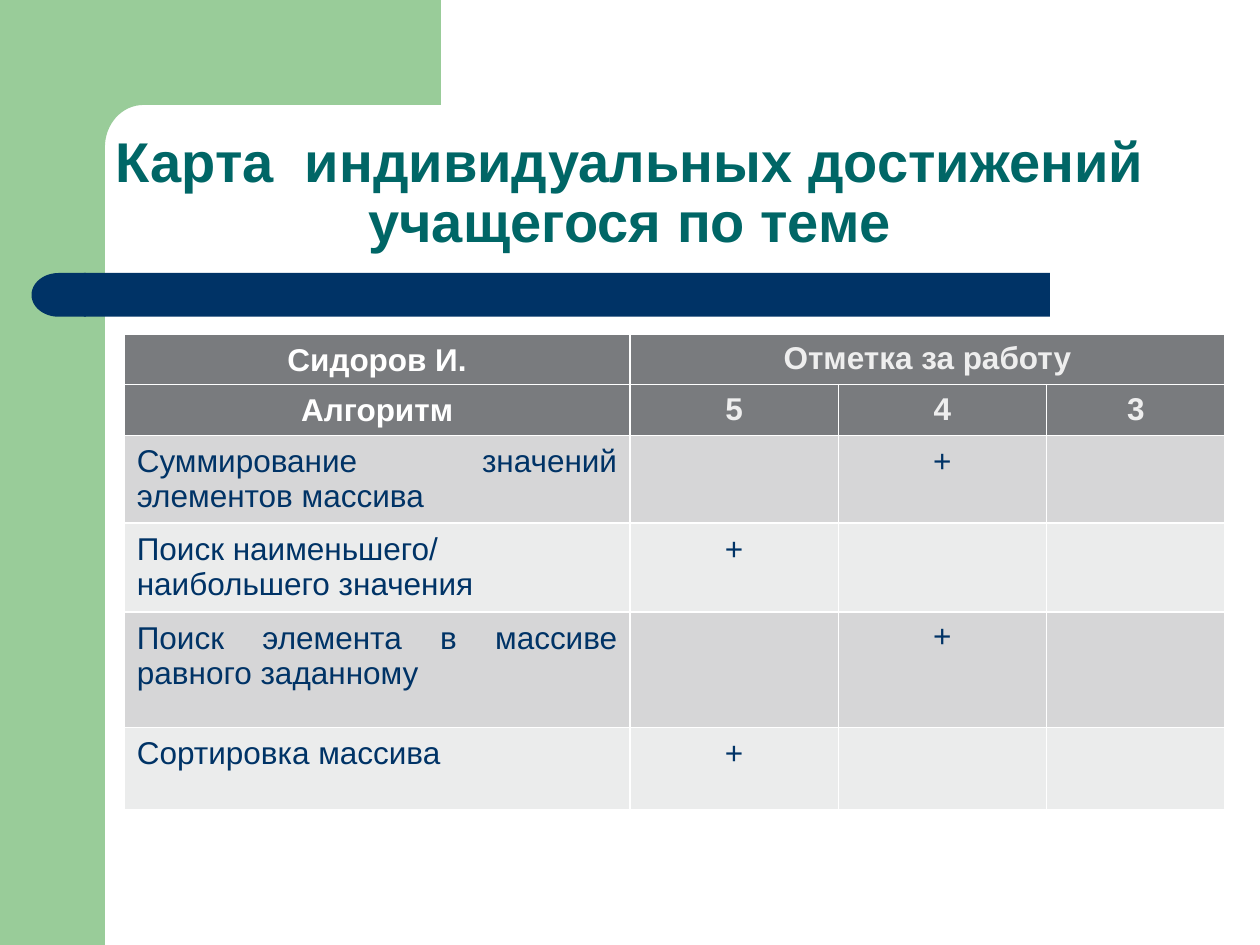
from dataclasses import dataclass
from math import cos, pi, sin

from lxml import etree
from pptx import Presentation
from pptx.dml.color import RGBColor
from pptx.enum.shapes import MSO_SHAPE
from pptx.enum.text import MSO_ANCHOR, PP_ALIGN
from pptx.oxml.ns import qn
from pptx.util import Pt

CENTER, JUSTIFY = PP_ALIGN.CENTER, PP_ALIGN.JUSTIFY
MIDDLE, TOP = MSO_ANCHOR.MIDDLE, MSO_ANCHOR.TOP
RECTANGLE, DELAY = MSO_SHAPE.RECTANGLE, MSO_SHAPE.FLOWCHART_DELAY
TITLE_ONLY = 5


@dataclass(frozen=True)
class Theme:
    """Colours, font and type sizes of the slide."""
    font: str = "Arial"
    title_size: int = 32
    table_size: int = 18
    green: str = "99CC99"
    navy: str = "003366"
    teal: str = "006666"
    white: str = "FFFFFF"
    pale: str = "EEEEEE"
    header: str = "797B7E"
    bands: tuple = ("D6D6D7", "EBECEC")


THEME = Theme()
COLUMN_WIDTHS = (289, 119, 119, 102)
ROW_HEIGHTS = (28, 29, 50, 51, 66, 47)
HEADER_ROWS = (("Сидоров И.", "Отметка за работу", "", ""),
               ("Алгоритм", "5", "4", "3"))
RESULTS = (("Суммирование значений элементов массива", "4"),
           ("Поиск наименьшего/\nнаибольшего значения", "5"),
           ("Поиск элемента в массиве равного заданному", "4"),
           ("Сортировка массива", "5"))


def apply(target, values):
    """Set each attribute of the target from a dict."""
    for name, value in values.items():
        setattr(target, name, value)


def place(shape, left, top, width, height):
    """Position a shape in points."""
    apply(shape, {"left": Pt(left), "top": Pt(top),
                  "width": Pt(width), "height": Pt(height)})


def write(text_frame, text, alignment, size, color, bold, spacing=1.0):
    """Write formatted paragraphs, one for each line of text."""
    text_frame.text = text
    for paragraph in text_frame.paragraphs:
        apply(paragraph, {"alignment": alignment, "line_spacing": spacing,
                          "space_before": Pt(0), "space_after": Pt(0)})
        apply(paragraph.font, {"name": THEME.font, "size": Pt(size), "bold": bold})
        paragraph.font.color.rgb = RGBColor.from_string(color)


def paint(shape, color):
    """Give a shape a plain fill with no line or shadow."""
    shape.shadow.inherit = False
    shape.fill.solid()
    shape.fill.fore_color.rgb = RGBColor.from_string(color)
    shape.line.fill.background()


def add_block(slide, kind, box, color, rotation=0):
    """Add a plain preset shape."""
    shape = slide.shapes.add_shape(kind, *map(Pt, box))
    shape.rotation = rotation
    paint(shape, color)


def add_corner(slide):
    """Add the green top band with its rounded inner corner."""
    left, inner, right, edge, bottom = 36, 60, 252, 60, 92
    radius_x, radius_y, steps = 22, 24, 16
    angles = [pi / 2 * step / steps for step in range(steps + 1)]
    arc = [(inner + radius_x * (1 - sin(angle)), edge + radius_y * (1 - cos(angle)))
           for angle in angles]
    points = [(right, edge), *arc, (inner, bottom), (left, bottom), (left, 0)]
    builder = slide.shapes.build_freeform(Pt(right), 0)
    builder.add_line_segments([(Pt(x), Pt(y)) for x, y in points])
    paint(builder.convert_to_shape(), THEME.green)


def add_title(slide):
    """Place and format the title placeholder."""
    title = slide.shapes.title
    place(title, 54, 77, 612, 68)
    apply(title.text_frame, {"word_wrap": True, "vertical_anchor": MIDDLE})
    write(title.text_frame, "Карта  индивидуальных достижений учащегося по теме",
          CENTER, THEME.title_size, THEME.teal, True, 0.9)


def add_borders(cell):
    """Draw thin white lines on all sides of a cell."""
    properties = cell._tc.get_or_add_tcPr()
    for index, side in enumerate(("lnL", "lnR", "lnT", "lnB")):
        line = etree.Element(qn(f"a:{side}"), w=str(Pt(0.96)))
        fill = etree.SubElement(line, qn("a:solidFill"))
        etree.SubElement(fill, qn("a:srgbClr"), val=THEME.white)
        properties.insert(index, line)


def format_cell(cell, text, fill, alignment, color, bold, spacing):
    """Fill, border and write one table cell."""
    apply(cell, {"margin_left": Pt(7.2), "margin_right": Pt(7.2), "margin_top": Pt(5),
                 "margin_bottom": Pt(3.6), "vertical_anchor": TOP})
    cell.fill.solid()
    cell.fill.fore_color.rgb = RGBColor.from_string(fill)
    add_borders(cell)
    write(cell.text_frame, text, alignment, THEME.table_size, color, bold, spacing)


def add_results_table(slide):
    """Add the table of algorithms and marks."""
    frame = slide.shapes.add_table(len(ROW_HEIGHTS), len(COLUMN_WIDTHS), Pt(71), Pt(191),
                                   Pt(sum(COLUMN_WIDTHS)), Pt(sum(ROW_HEIGHTS)))
    table = frame.table
    for column, width in zip(table.columns, COLUMN_WIDTHS):
        column.width = Pt(width)
    for row, height in zip(table.rows, ROW_HEIGHTS):
        row.height = Pt(height)
    table.cell(0, 1).merge(table.cell(0, 3))
    for row, texts in enumerate(HEADER_ROWS):
        for column, text in enumerate(texts):
            color, spacing = (THEME.pale, 0.95) if column else (THEME.white, 1.0)
            format_cell(table.cell(row, column), text, THEME.header, CENTER,
                        color, True, spacing)
    marks = HEADER_ROWS[1][1:]
    for index, (algorithm, result) in enumerate(RESULTS):
        texts = [algorithm] + ["+" if mark == result else "" for mark in marks]
        for column, text in enumerate(texts):
            spacing = 0.95 if column and index == 2 else 1.0
            format_cell(table.cell(index + len(HEADER_ROWS), column), text,
                        THEME.bands[index % 2], CENTER if column else JUSTIFY,
                        THEME.navy, False, spacing)


def main():
    """Build and save the slide."""
    presentation = Presentation()
    apply(presentation, {"slide_width": Pt(720), "slide_height": Pt(540)})
    slide = presentation.slides.add_slide(presentation.slide_layouts[TITLE_ONLY])
    add_block(slide, RECTANGLE, (0, 0, 60, 540), THEME.green)
    add_corner(slide)
    add_block(slide, RECTANGLE, (48, 156, 552, 25), THEME.navy)
    add_block(slide, DELAY, (18, 156, 31, 25), THEME.navy, 180)
    add_title(slide)
    add_results_table(slide)
    presentation.save("out.pptx")


if __name__ == "__main__":
    main()
